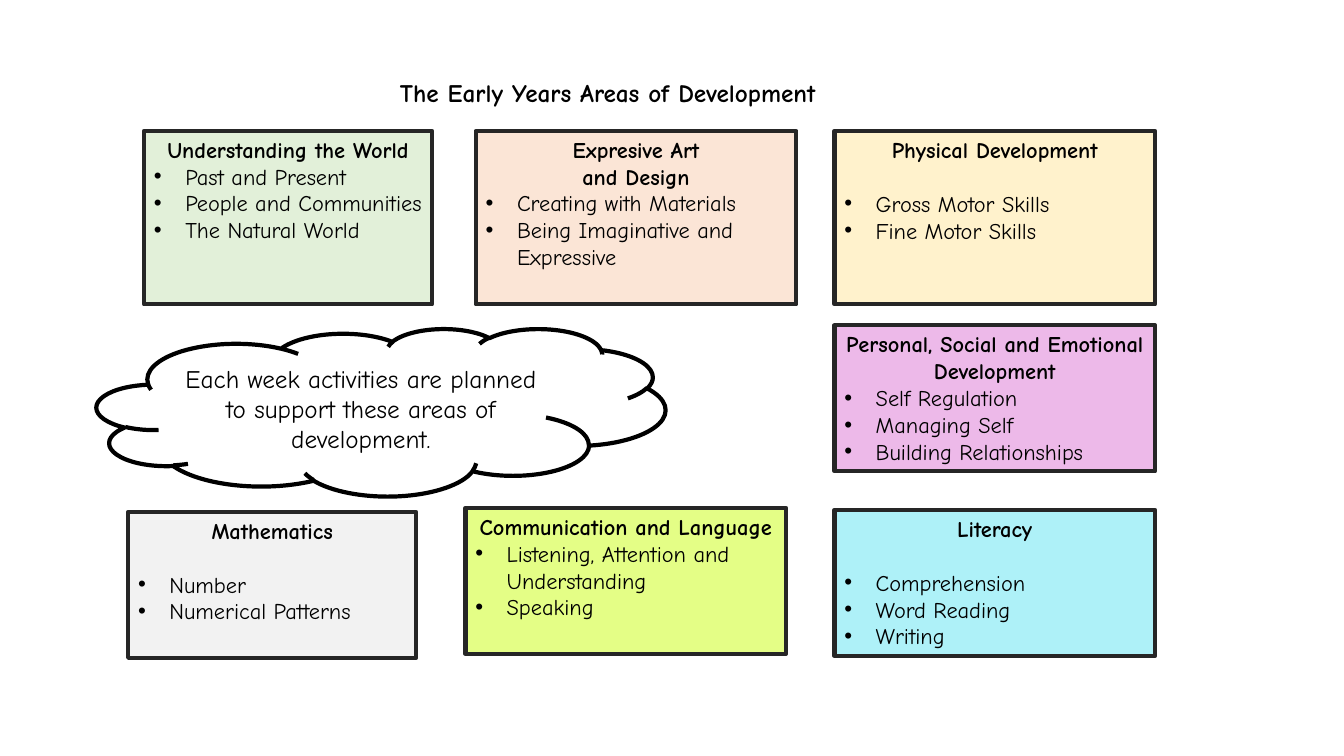
from dataclasses import dataclass

from lxml.etree import SubElement
from pptx import Presentation
from pptx.dml.color import RGBColor
from pptx.enum.shapes import MSO_SHAPE
from pptx.enum.text import MSO_ANCHOR, PP_ALIGN
from pptx.oxml.ns import qn
from pptx.util import Cm, Pt

TITLE = "The Early Years Areas of Development"
MESSAGE = "Each week activities are planned to support these areas of development."

NARROW, WIDE = 7.26, 8.08
TALL, SHORT = 4.37, 3.68
TOP_ROW, RIGHT_COLUMN = 3.3, 21.03

# heading lines, skills, gap under heading, fill, (left, top, width, height) in cm
AREAS = [
    (["Understanding the World"],
     ["Past and Present", "People and Communities", "The Natural World"],
     False, "E2F0D9", (3.63, TOP_ROW, NARROW, TALL)),
    (["Expresive Art", "and Design"],
     ["Creating with Materials", "Being Imaginative and Expressive"],
     False, "FBE5D6", (11.99, TOP_ROW, WIDE, TALL)),
    (["Physical Development"],
     ["Gross Motor Skills", "Fine Motor Skills"],
     True, "FFF2CC", (RIGHT_COLUMN, TOP_ROW, WIDE, TALL)),
    (["Mathematics"],
     ["Number", "Numerical Patterns"],
     True, "F2F2F2", (3.23, 12.9, NARROW, SHORT)),
    (["Personal, Social and Emotional Development"],
     ["Self Regulation", "Managing Self", "Building Relationships"],
     False, "EDB9E9", (RIGHT_COLUMN, 8.2, WIDE, SHORT)),
    (["Literacy"],
     ["Comprehension", "Word Reading", "Writing"],
     True, "AEF1F8", (RIGHT_COLUMN, 12.85, WIDE, SHORT)),
    (["Communication and Language"],
     ["Listening, Attention and Understanding", "Speaking"],
     False, "E4FE86", (11.73, 12.8, WIDE, SHORT)),
]
TITLE_BOX = (9.83, 1.83, 15.24, 1.02)
CLOUD_BOX = (2.44, 8.28, 14.33, 4.22)


@dataclass(frozen=True)
class Theme:
    font: str = "Comic Neue"
    ink: str = "000000"
    border: str = "262626"
    paper: str = "FFFFFF"
    large: int = 18
    body: int = 16
    line: int = 3
    heading_gap: float = 19.3
    indent: float = 0.79


THEME = Theme()


def write(frame, text, *, size=THEME.body, bold=False, align=PP_ALIGN.LEFT,
          bullet=False, gap_after=0):
    """Fill the frame's empty first paragraph, or add another one."""
    first = frame.paragraphs[0]
    paragraph = frame.add_paragraph() if first.runs else first
    if bullet:
        properties = paragraph._p.get_or_add_pPr()
        indent = Cm(THEME.indent)
        properties.set("marL", str(indent))
        properties.set("indent", str(-indent))
        SubElement(properties, qn("a:buFont")).set("typeface", "Arial")
        SubElement(properties, qn("a:buChar")).set("char", "•")
    paragraph.alignment = align
    if gap_after:
        paragraph.space_after = Pt(gap_after)
    run = paragraph.add_run()
    run.text = text
    run.font.name = THEME.font
    run.font.size = Pt(size)
    run.font.bold = bold
    run.font.color.rgb = RGBColor.from_string(THEME.ink)


def add_panel(slide, preset, box, fill, border, anchor):
    """Add an outlined shape and return its text frame."""
    panel = slide.shapes.add_shape(preset, *map(Cm, box))
    panel.shadow.inherit = False
    panel.fill.solid()
    panel.fill.fore_color.rgb = RGBColor.from_string(fill)
    panel.line.color.rgb = RGBColor.from_string(border)
    panel.line.width = Pt(THEME.line)
    panel.text_frame.word_wrap = True
    panel.text_frame.vertical_anchor = anchor
    return panel.text_frame


def main():
    deck = Presentation()
    deck.slide_width, deck.slide_height = Cm(33.87), Cm(19.05)
    slide = deck.slides.add_slide(deck.slide_layouts[6])

    title = slide.shapes.add_textbox(*map(Cm, TITLE_BOX)).text_frame
    title.word_wrap = True
    write(title, TITLE, size=THEME.large, bold=True)

    for headings, skills, has_gap, fill, box in AREAS:
        area = add_panel(slide, MSO_SHAPE.RECTANGLE, box, fill, THEME.border,
                         MSO_ANCHOR.TOP)
        for heading in headings:
            write(area, heading, bold=True, align=PP_ALIGN.CENTER,
                  gap_after=THEME.heading_gap if has_gap else 0)
        for skill in skills:
            write(area, skill, bullet=True)

    cloud = add_panel(slide, MSO_SHAPE.CLOUD, CLOUD_BOX, THEME.paper, THEME.ink,
                      MSO_ANCHOR.MIDDLE)
    write(cloud, MESSAGE, size=THEME.large, align=PP_ALIGN.CENTER)

    deck.save("out.pptx")


if __name__ == "__main__":
    main()
